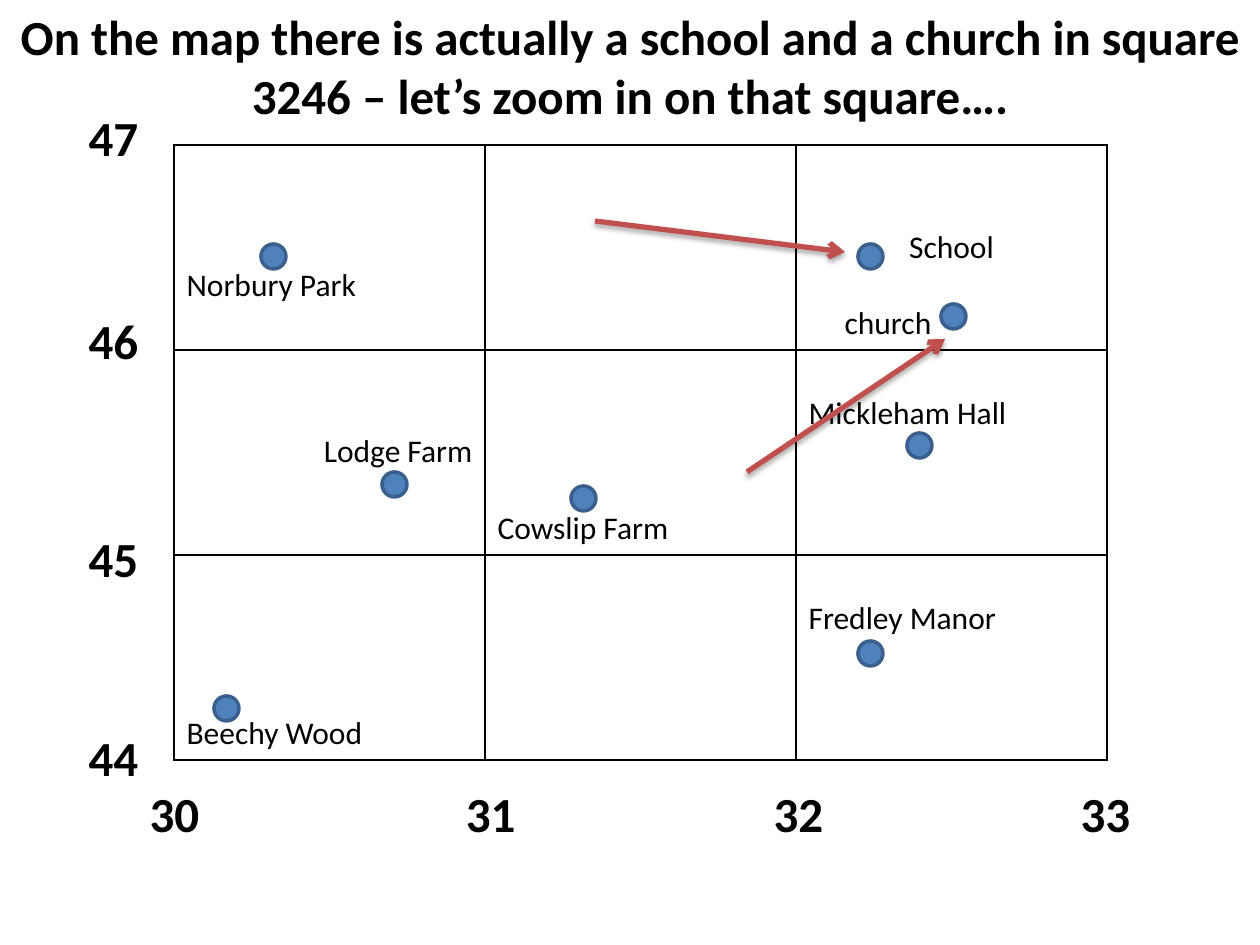
from dataclasses import dataclass

from lxml import etree
from pptx import Presentation
from pptx.dml.color import RGBColor
from pptx.enum.shapes import MSO_CONNECTOR, MSO_SHAPE
from pptx.enum.text import PP_ALIGN
from pptx.oxml.ns import qn
from pptx.util import Emu, Pt

LEFT, CENTER, RIGHT = PP_ALIGN.LEFT, PP_ALIGN.CENTER, PP_ALIGN.RIGHT
ELLIPSE = MSO_SHAPE.OVAL
STRAIGHT = MSO_CONNECTOR.STRAIGHT

BLACK = RGBColor(0x00, 0x00, 0x00)
WHITE = RGBColor(0xFF, 0xFF, 0xFF)
BLUE = RGBColor(0x4F, 0x81, 0xBD)
DARK_BLUE = RGBColor(0x3A, 0x5F, 0x8C)
RED = RGBColor(0xC0, 0x50, 0x4D)

FONT = "Calibri"
EMU_PER_PIXEL = 914400 / 126
PLACE_SIZE = 18
PLACE_LINE = 22  # points per line of place names
GRID_LEFT, GRID_TOP = 174, 145
SQUARE_WIDTH, SQUARE_HEIGHT = 311, 205
GRID_COUNT = 3
LABEL_WIDTH, LABEL_HEIGHT = 79, 72
DOT_SIZE = 25


@dataclass(frozen=True)
class Place:
    name: str
    row: int
    column: int
    line: int  # text line inside the square, from 0
    align: PP_ALIGN = LEFT
    indent: int = 0


@dataclass(frozen=True)
class Label:
    text: str
    left: int
    top: int


@dataclass(frozen=True)
class Dot:
    left: int
    top: int


@dataclass(frozen=True)
class Arrow:
    start: tuple[int, int]
    end: tuple[int, int]


PLACES = [
    Place("Norbury Park", 0, 0, 3),
    Place("School", 0, 2, 2, CENTER),
    Place("church", 0, 2, 4, indent=36),
    Place("Lodge Farm", 1, 0, 2, RIGHT),
    Place("Cowslip Farm", 1, 1, 4),
    Place("Mickleham Hall", 1, 2, 1),
    Place("Beechy Wood", 2, 0, 4),
    Place("Fredley Manor", 2, 2, 1),
]
NORTHINGS = [Label("47", 74, 101), Label("46", 74, 304),
             Label("45", 74, 522), Label("44", 74, 721)]
EASTINGS = [Label("30", 135, 777), Label("31", 451, 777),
            Label("32", 759, 777), Label("33", 1066, 777)]
DOTS = [Dot(261, 244), Dot(382, 472), Dot(571, 486), Dot(214, 696),
        Dot(858, 641), Dot(907, 433), Dot(858, 244), Dot(941, 304)]
ARROWS = [Arrow((595, 221), (845, 252)), Arrow((747, 472), (945, 339))]


def px(value: int) -> Emu:
    return Emu(round(value * EMU_PER_PIXEL))


def write(paragraph, text: str, *, size: int, bold: bool = False,
          align: PP_ALIGN = LEFT) -> None:
    paragraph.alignment = align
    run = paragraph.add_run()
    run.text = text
    run.font.name = FONT
    run.font.size = Pt(size)
    run.font.bold = bold
    run.font.color.rgb = BLACK


def add_heading(slide, text: str, left: int, top: int, width: int, height: int) -> None:
    frame = slide.shapes.add_textbox(px(left), px(top), px(width), px(height)).text_frame
    frame.word_wrap = True
    write(frame.paragraphs[0], text, size=28, bold=True, align=CENTER)


def set_borders(cell) -> None:
    properties = cell._tc.get_or_add_tcPr()
    for side in ("a:lnL", "a:lnR", "a:lnT", "a:lnB"):
        line = etree.SubElement(properties, qn(side), w=str(Pt(1)))
        fill = etree.SubElement(line, qn("a:solidFill"))
        etree.SubElement(fill, qn("a:srgbClr"), val=str(BLACK))


def fill_square(cell, places: list[Place]) -> None:
    """Put each place name on its line, using the top margin and spacing."""
    set_borders(cell)
    cell.fill.solid()
    cell.fill.fore_color.rgb = WHITE
    frame = cell.text_frame
    for index, place in enumerate(places):
        if index == 0:
            paragraph = frame.paragraphs[0]
            cell.margin_top = px(6) + Pt(PLACE_LINE * place.line)
        else:
            paragraph = frame.add_paragraph()
            skipped = place.line - places[index - 1].line - 1
            paragraph.space_before = Pt(PLACE_LINE * skipped)
        write(paragraph, place.name, size=PLACE_SIZE, align=place.align)
        if place.indent:
            paragraph._p.get_or_add_pPr().set("marL", str(px(place.indent)))


def add_map_grid(slide) -> None:
    frame = slide.shapes.add_table(
        GRID_COUNT, GRID_COUNT, px(GRID_LEFT), px(GRID_TOP),
        px(SQUARE_WIDTH * GRID_COUNT), px(SQUARE_HEIGHT * GRID_COUNT))
    table = frame.table
    table.first_row = False
    table.horz_banding = False
    for column in table.columns:
        column.width = px(SQUARE_WIDTH)
    for row_index, row in enumerate(table.rows):
        row.height = px(SQUARE_HEIGHT)
        for column_index, cell in enumerate(row.cells):
            fill_square(cell, [place for place in PLACES
                               if (place.row, place.column) == (row_index, column_index)])


def add_dot(slide, dot: Dot) -> None:
    shape = slide.shapes.add_shape(ELLIPSE, px(dot.left), px(dot.top),
                                   px(DOT_SIZE), px(DOT_SIZE))
    shape.shadow.inherit = False
    shape.fill.solid()
    shape.fill.fore_color.rgb = BLUE
    shape.line.color.rgb = DARK_BLUE
    shape.line.width = Pt(2)


def add_arrow(slide, arrow: Arrow) -> None:
    connector = slide.shapes.add_connector(
        STRAIGHT, *(px(value) for value in arrow.start + arrow.end))
    connector.line.color.rgb = RED
    connector.line.width = Pt(3)
    etree.SubElement(connector.line._get_or_add_ln(), qn("a:tailEnd"), type="arrow")
    effects = etree.SubElement(connector._element.spPr, qn("a:effectLst"))
    shadow = etree.SubElement(effects, qn("a:outerShdw"), blurRad=str(Pt(3.1)),
                              dist=str(Pt(1.8)), dir="5400000", rotWithShape="0")
    color = etree.SubElement(shadow, qn("a:srgbClr"), val=str(BLACK))
    etree.SubElement(color, qn("a:alpha"), val="35000")


def main() -> None:
    presentation = Presentation()
    presentation.slide_width = px(1260)
    presentation.slide_height = px(945)
    slide = presentation.slides.add_slide(presentation.slide_layouts[6])
    add_map_grid(slide)
    for label in NORTHINGS + EASTINGS:
        add_heading(slide, label.text, label.left, label.top, LABEL_WIDTH, LABEL_HEIGHT)
    add_heading(slide, "On the map there is actually a school and a church in square "
                       "3246 – let’s zoom in on that square….", 0, 0, 1260, 131)
    for dot in DOTS:
        add_dot(slide, dot)
    for arrow in ARROWS:
        add_arrow(slide, arrow)
    presentation.save("out.pptx")


if __name__ == "__main__":
    main()
